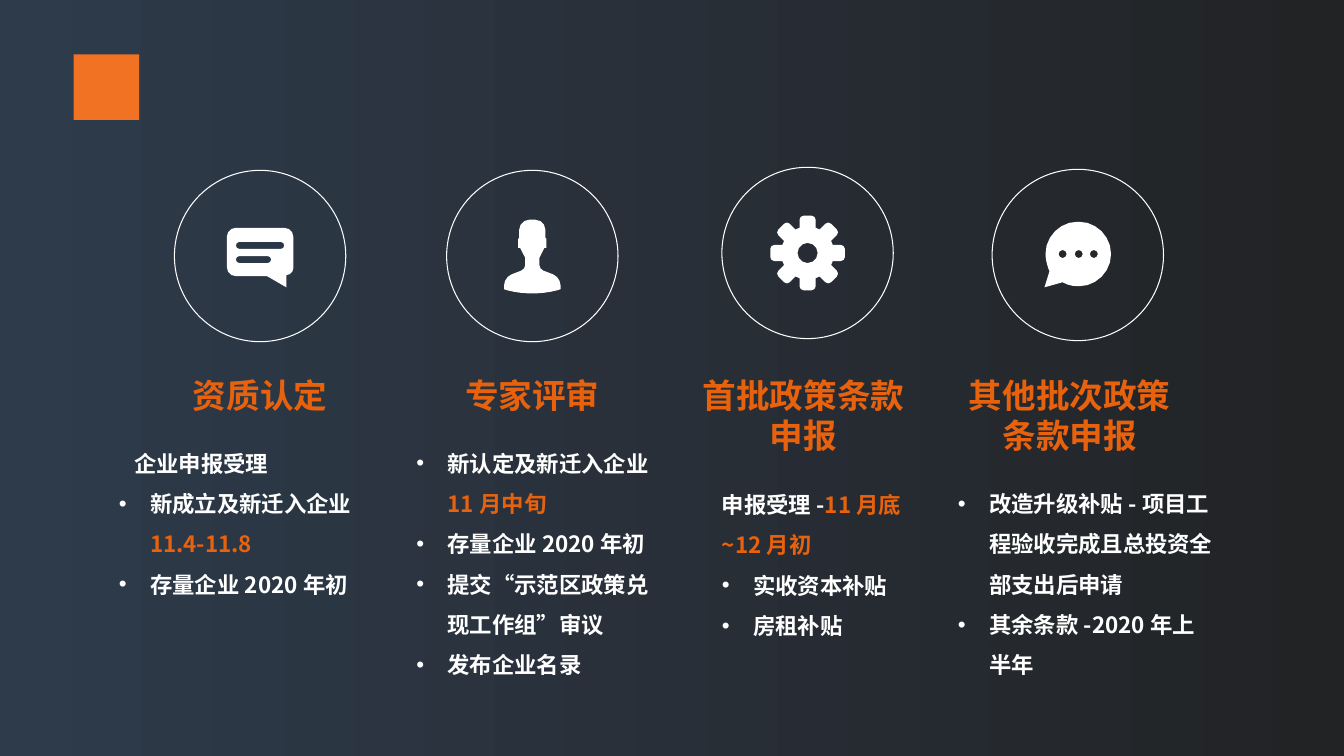
from math import cos, sin, pi
from lxml import etree
from pptx import Presentation
from pptx import util as u
from pptx.dml import color
from pptx.enum import shapes, text
from pptx.oxml import ns

FONT = "Noto Sans CJK SC"
WHITE, ORANGE = "FFFFFF", "E8620E"
HEADS = [
    ("资质认定", 1.46, 0.5),
    ("专家评审", 4.16, 0.5),
    ("首批政策条款申报", 6.85, 0.91),
    ("其他批次政策条款申报", 9.49, 0.91),
]
LISTS = [
    ((1.08, 4.28, 2.96, 1.72), [
        (0.15, [("企业申报受理", WHITE)]),
        (None, [("新成立及新迁入企业", WHITE), ("11.4-11.8", ORANGE)]),
        (None, [("存量企业2020年初", WHITE)])]),
    ((4.03, 4.28, 2.6, 2.52), [
        (None, [("新认定及新迁入企业", WHITE), ("11月中旬", ORANGE)]),
        (None, [("存量企业2020年初", WHITE)]),
        (None, [("提交“示范区政策兑现工作组”审议", WHITE)]),
        (None, [("发布企业名录", WHITE)])]),
    ((7.06, 4.69, 2.35, 1.72), [
        (0, [("申报受理-", WHITE), ("11月底~12月初", ORANGE)]),
        (None, [("实收资本补贴", WHITE)]),
        (None, [("房租补贴", WHITE)])]),
    ((9.4, 4.68, 2.73, 2.12), [
        (None, [("改造升级补贴-项目工程验收完成且总投资全部支出后申请", WHITE)]),
        (None, [("其余条款-2020年上半年", WHITE)])]),
]
NOTE = [(2.25, 2.26, 0.09), (2.91, 2.26, 0.09), (2.91, 2.73, 0.07), (2.84, 2.73, 0),
        (2.84, 2.85, 0), (2.65, 2.74, 0), (2.25, 2.74, 0.09)]
CHAT = [(10.37, 2.2, 0.32), (11.02, 2.2, 0.32), (11.02, 2.84, 0.32), (10.61, 2.84, 0.07),
        (10.54, 2.8, 0), (10.36, 2.85, 0), (10.41, 2.69, 0), (10.37, 2.6, 0.08)]
HALF = [(0.13, 2.18, 0.1), (0.13, 2.36, 0), (0.14, 2.37, 0), (0.14, 2.46, 0),
        (0.12, 2.46, 0), (0.07, 2.56, 0), (0.07, 2.67, 0.04), (0.28, 2.75, 0.08),
        (0.28, 2.87, 0), (0.15, 2.91, 0.1)]
TOOTH = [(0.25, -0.08, 0), (0.37, -0.08, 0.04), (0.37, 0.08, 0.04), (0.25, 0.08, 0)]


def rgb(code):
    return color.RGBColor.from_string(code)


def box(x, y, w, h):
    r = min(w, h) / 2
    return [(x, y, r), (x + w, y, r), (x + w, y + h, r), (x, y + h, r)]


def disc(x, y, r):
    return box(x - r, y - r, 2 * r, 2 * r)


def gear(x, y):
    turns = [i * pi / 4 for i in range(8)]
    return [(x + a * cos(t) - b * sin(t), y + a * sin(t) + b * cos(t), r)
            for t in turns for a, b, r in TOOTH]


def person(x):
    return ([(x + d, y, r) for d, y, r in HALF]
            + [(x - d, y, r) for d, y, r in reversed(HALF)])


def toward(a, b, dist):
    dx, dy = b[0] - a[0], b[1] - a[1]
    size = (dx * dx + dy * dy) ** 0.5
    return a[0] + dx / size * dist, a[1] + dy / size * dist


def outline(ring):
    dots = []
    for i, spot in enumerate(ring):
        r = spot[2]
        if not r:
            dots.append(spot[:2])
            continue
        prev, after = ring[i - 1], ring[(i + 1) % len(ring)]
        curve = [toward(spot, prev, r), toward(spot, prev, 0.45 * r),
                 toward(spot, after, 0.45 * r), toward(spot, after, r)]
        steps = 2 if r < 0.06 else 3 if r < 0.2 else 6
        for n in range(steps + 1):
            t = n / steps
            mix = ((1 - t) ** 3, 3 * t * (1 - t) ** 2, 3 * t * t * (1 - t), t ** 3)
            dots.append(tuple(sum(m * p[k] for m, p in zip(mix, curve)) for k in (0, 1)))
    return list(dict.fromkeys((u.Inches(round(x, 3)), u.Inches(round(y, 3))) for x, y in dots))


def style(run, size, tint):
    run.font.size, run.font.bold, run.font.name = u.Pt(size), True, FONT
    run.font.color.rgb = rgb(tint)
    east = etree.SubElement(run.font._element, ns.qn("a:ea"))
    east.set("typeface", FONT)


def indent(para, left):
    props = para._p.get_or_add_pPr()
    hang = 0.31 if left is None else 0
    props.set("marL", str(u.Inches(hang or left)))
    props.set("indent", str(u.Inches(-hang)))
    if left is None:
        etree.SubElement(props, ns.qn("a:buFont")).set("typeface", "Arial")
        etree.SubElement(props, ns.qn("a:buChar")).set("char", "•")
    else:
        etree.SubElement(props, ns.qn("a:buNone"))


def place(item, at):
    item.left, item.top, item.width, item.height = map(u.Inches, at)


def badge(slide, left, top, rings):
    group = slide.shapes.add_group_shape()
    ring = group.shapes.add_shape(shapes.MSO_SHAPE.OVAL, *map(u.Inches, (left, top, 1.7, 1.7)))
    ring.shadow.inherit = False
    ring.fill.background()
    ring.line.color.rgb = rgb(WHITE)
    ring.line.width = u.Pt(0.75)
    paths = [outline(r) for r in rings]
    pen = group.shapes.build_freeform(*paths[0][0], scale=1.0)
    pen.add_line_segments(paths[0][1:], close=True)
    for dots in paths[1:]:
        pen.move_to(*dots[0])
        pen.add_line_segments(dots[1:], close=True)
    icon = pen.convert_to_shape()
    icon.shadow.inherit = False
    icon.fill.solid()
    icon.fill.fore_color.rgb = rgb(WHITE)
    icon.line.fill.background()


def fill_list(body, at, rows):
    place(body, at)
    frame = body.text_frame
    frame.word_wrap = True
    frame.auto_size = text.MSO_AUTO_SIZE.SHAPE_TO_FIT_TEXT
    frame.vertical_anchor = text.MSO_ANCHOR.TOP
    for i, (left, parts) in enumerate(rows):
        para = frame.add_paragraph() if i else frame.paragraphs[0]
        para.line_spacing = 1.5
        para.space_before = u.Pt(0)
        indent(para, left)
        for words, tint in parts:
            run = para.add_run()
            run.text = words
            style(run, 16, tint)


def main():
    deck = Presentation()
    deck.slide_width, deck.slide_height = u.Inches(13.33), u.Inches(7.5)
    slide = deck.slides.add_slide(deck.slide_layouts[4])
    title, *bodies = list(slide.placeholders)
    title._element.getparent().remove(title._element)

    back = slide.background.fill
    back.gradient()
    back.gradient_angle = 180
    for stop, tint in zip(back.gradient_stops, ("222325", "2E3B4B")):
        stop.color.rgb = rgb(tint)

    mark = slide.shapes.add_shape(shapes.MSO_SHAPE.RECTANGLE,
                                  *map(u.Inches, (0.73, 0.54, 0.65, 0.65)))
    mark.shadow.inherit = False
    mark.fill.solid()
    mark.fill.fore_color.rgb = rgb("F27224")
    mark.line.fill.background()

    badge(slide, 1.73, 1.69, [NOTE, box(2.34, 2.4, 0.48, 0.07), box(2.34, 2.54, 0.35, 0.07)])
    badge(slide, 4.43, 1.69, [person(5.28)])
    badge(slide, 7.16, 1.66, [gear(8.01, 2.51), disc(8.01, 2.51, 0.1)])
    badge(slide, 9.84, 1.68, [CHAT] + [disc(x, 2.52, 0.04) for x in (10.54, 10.7, 10.85)])

    for words, left, high in HEADS:
        head = slide.shapes.add_textbox(*map(u.Inches, (left, 3.67, 2.24, high)))
        frame = head.text_frame
        frame.word_wrap = True
        frame.auto_size = text.MSO_AUTO_SIZE.SHAPE_TO_FIT_TEXT
        frame.text = words
        para = frame.paragraphs[0]
        para.alignment = text.PP_ALIGN.CENTER
        style(para.runs[0], 24, ORANGE)

    for body, (at, rows) in zip(bodies, LISTS):
        fill_list(body, at, rows)
    deck.save("out.pptx")


if __name__ == "__main__":
    main()
